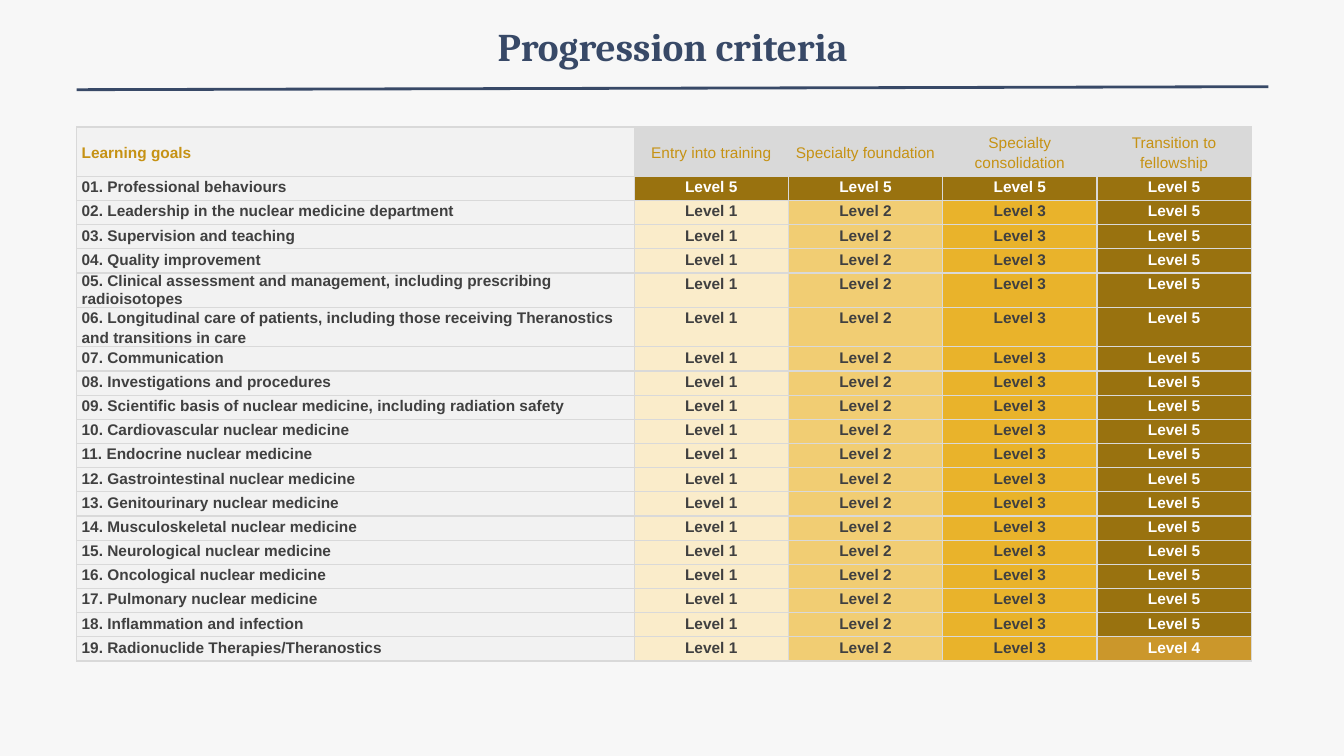
from dataclasses import dataclass

from lxml.etree import SubElement
from pptx import Presentation
from pptx.dml.color import RGBColor
from pptx.enum.shapes import MSO_CONNECTOR
from pptx.enum.text import MSO_ANCHOR, MSO_AUTO_SIZE, PP_ALIGN
from pptx.oxml.ns import qn
from pptx.util import Inches, Pt

COLORS = {
    "background": "F7F7F7", "navy": "384967", "gold": "C69214",
    "dark": "404040", "white": "FFFFFF", "label": "F2F2F2", "grey": "D9D9D9",
}
# Level -> cell fill and text colour
LEVELS = {
    1: ("FAECCA", COLORS["dark"]),
    2: ("F1CD73", COLORS["dark"]),
    3: ("E9B32B", COLORS["dark"]),
    4: ("CB972B", COLORS["white"]),
    5: ("99720F", COLORS["white"]),
}
HEADERS = ["Learning goals", "Entry into training", "Specialty foundation",
           "Specialty consolidation", "Transition to fellowship"]
COL_WIDTHS = [5.53] + [1.53] * 4
HEADER_HEIGHT, ROW_HEIGHT = 0.49, 0.24


@dataclass
class Goal:
    name: str
    levels: tuple[int, ...] = (1, 2, 3, 5)
    compact: bool = False


@dataclass
class CellStyle:
    fill: str
    color: str
    bold: bool = True
    align: PP_ALIGN = PP_ALIGN.CENTER
    anchor: MSO_ANCHOR = MSO_ANCHOR.TOP
    line_spacing: float = 1.15
    space_after: int = 2


GOALS = [
    Goal("Professional behaviours", (5, 5, 5, 5)),
    Goal("Leadership in the nuclear medicine department"),
    Goal("Supervision and teaching"),
    Goal("Quality improvement"),
    Goal("Clinical assessment and management, including prescribing radioisotopes",
         compact=True),
    Goal("Longitudinal care of patients, including those receiving Theranostics "
         "and transitions in care"),
    Goal("Communication"),
    Goal("Investigations and procedures"),
    Goal("Scientific basis of nuclear medicine, including radiation safety"),
    Goal("Cardiovascular nuclear medicine"),
    Goal("Endocrine nuclear medicine"),
    Goal("Gastrointestinal nuclear medicine"),
    Goal("Genitourinary nuclear medicine"),
    Goal("Musculoskeletal nuclear medicine"),
    Goal("Neurological nuclear medicine"),
    Goal("Oncological nuclear medicine"),
    Goal("Pulmonary nuclear medicine"),
    Goal("Inflammation and infection"),
    Goal("Radionuclide Therapies/Theranostics", (1, 2, 3, 4)),
]


def set_attrs(obj, values: dict) -> None:
    for name, value in values.items():
        setattr(obj, name, value)


def set_font(font, name: str, size: float, color: str, bold: bool) -> None:
    set_attrs(font, {"name": name, "size": Pt(size), "bold": bold})
    font.color.rgb = RGBColor.from_string(color)


def add_borders(cell, color: str, width: float) -> None:
    tc_pr = cell._tc.get_or_add_tcPr()
    for side in ("a:lnL", "a:lnR", "a:lnT", "a:lnB"):
        ln = SubElement(tc_pr, qn(side), w=str(Pt(width)))
        fill = SubElement(ln, qn("a:solidFill"))
        SubElement(fill, qn("a:srgbClr"), val=color)


def fill_cell(cell, text: str, style: CellStyle) -> None:
    set_attrs(cell, {
        "margin_left": Inches(0.05), "margin_right": Inches(0.05),
        "margin_top": 0, "margin_bottom": 0, "vertical_anchor": style.anchor,
    })
    add_borders(cell, COLORS["grey"], 1)
    cell.fill.solid()
    cell.fill.fore_color.rgb = RGBColor.from_string(style.fill)
    p = cell.text_frame.paragraphs[0]
    set_attrs(p, {"alignment": style.align, "line_spacing": style.line_spacing,
                  "space_before": Pt(0), "space_after": Pt(style.space_after)})
    r = p.add_run()
    r.text = text
    set_font(r.font, "Arial", 11, style.color, style.bold)


def add_title(s, text: str) -> None:
    sp = s.shapes.title
    set_attrs(sp, {"left": Inches(2.17), "top": Inches(0.17),
                   "width": Inches(9), "height": Inches(1.25)})
    tf = sp.text_frame
    set_attrs(tf, {"word_wrap": True, "auto_size": MSO_AUTO_SIZE.NONE,
                   "vertical_anchor": MSO_ANCHOR.TOP})
    p = tf.paragraphs[0]
    set_attrs(p, {"alignment": PP_ALIGN.CENTER, "space_before": Pt(0)})
    r = p.add_run()
    r.text = text
    set_font(r.font, "Cambria", 28, COLORS["navy"], True)


def add_rule(s) -> None:
    line = s.shapes.add_connector(MSO_CONNECTOR.STRAIGHT, Inches(0.76), Inches(0.89),
                                  Inches(12.58), Inches(0.86))
    line.line.color.rgb = RGBColor.from_string(COLORS["navy"])
    line.line.width = Pt(2)
    SubElement(line._element.spPr, qn("a:effectLst"))


def add_criteria_table(s) -> None:
    height = HEADER_HEIGHT + ROW_HEIGHT * len(GOALS)
    table = s.shapes.add_table(len(GOALS) + 1, len(HEADERS), Inches(0.76), Inches(1.26),
                               Inches(sum(COL_WIDTHS)), Inches(height)).table
    set_attrs(table, {"first_row": False, "horz_banding": False})
    for column, width in zip(table.columns, COL_WIDTHS):
        column.width = Inches(width)
    for i, row in enumerate(table.rows):
        row.height = Inches(ROW_HEIGHT if i else HEADER_HEIGHT)

    # Header row
    for col, text in enumerate(HEADERS):
        first = col == 0
        fill_cell(table.cell(0, col), text, CellStyle(
            COLORS["label"] if first else COLORS["grey"], COLORS["gold"], bold=first,
            align=PP_ALIGN.LEFT if first else PP_ALIGN.CENTER,
            anchor=MSO_ANCHOR.MIDDLE, space_after=4))

    # Goal rows
    for row, goal in enumerate(GOALS, start=1):
        label = CellStyle(COLORS["label"], COLORS["dark"], align=PP_ALIGN.LEFT)
        if goal.compact:
            set_attrs(label, {"line_spacing": 1.0, "space_after": 0})
        fill_cell(table.cell(row, 0), f"{row:02d}. {goal.name}", label)
        for col, level in enumerate(goal.levels, start=1):
            fill_cell(table.cell(row, col), f"Level {level}", CellStyle(*LEVELS[level]))


def main() -> None:
    prs = Presentation()
    set_attrs(prs, {"slide_width": Inches(13.33), "slide_height": Inches(7.5)})
    s = prs.slides.add_slide(prs.slide_layouts[5])
    s.background.fill.solid()
    s.background.fill.fore_color.rgb = RGBColor.from_string(COLORS["background"])
    add_title(s, "Progression criteria")
    add_rule(s)
    add_criteria_table(s)
    prs.save("out.pptx")


if __name__ == "__main__":
    main()
